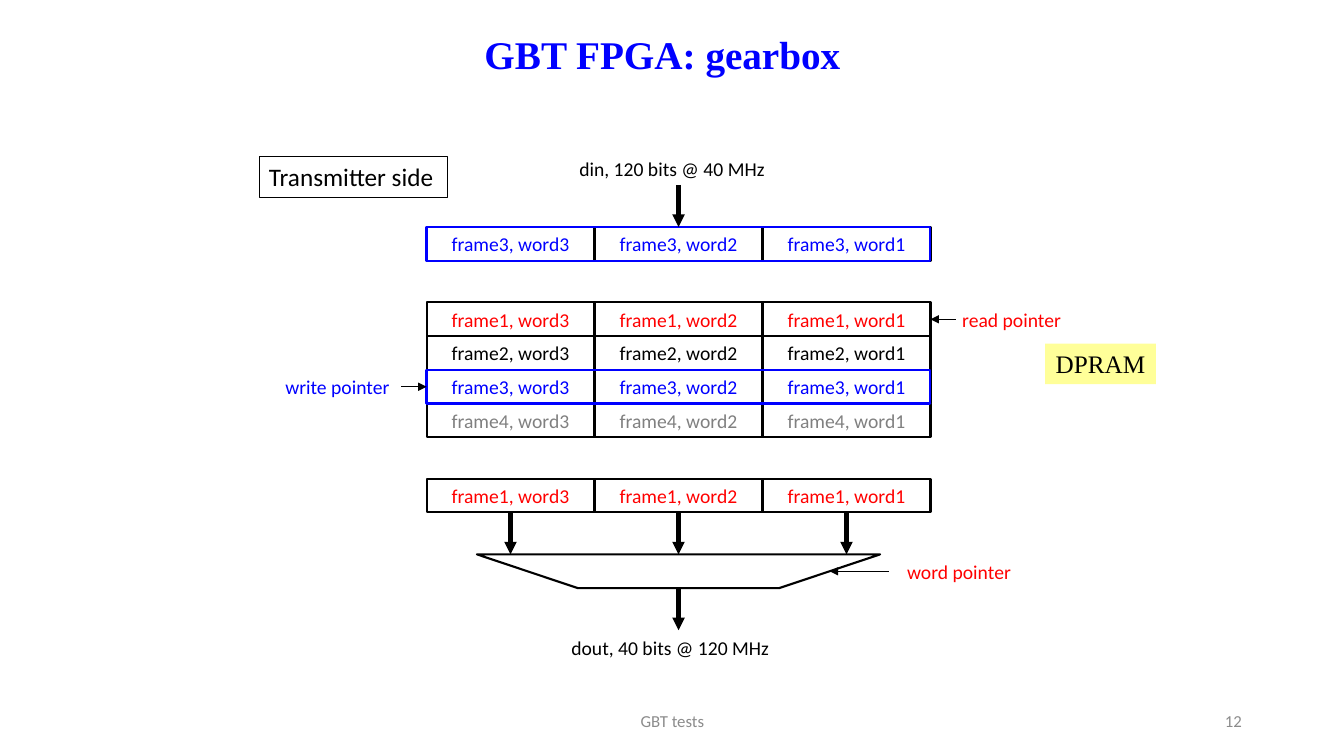
from lxml import etree
from pptx import Presentation
from pptx.dml.color import RGBColor
from pptx.enum import shapes, text
from pptx.oxml.ns import qn
from pptx.util import Cm, Pt

BLACK = RGBColor(0x00, 0x00, 0x00)
BLUE = RGBColor(0x00, 0x00, 0xFF)
RED = RGBColor(0xFF, 0x00, 0x00)
GRAY = RGBColor(0x80, 0x80, 0x80)
PALE = RGBColor(0x8C, 0x8C, 0x8C)
YELLOW = RGBColor(0xFF, 0xFF, 0x99)
SANS, SERIF = "Calibri", "Times New Roman"
LEFT, MID, RIGHT = text.PP_ALIGN.LEFT, text.PP_ALIGN.CENTER, text.PP_ALIGN.RIGHT
TOP, HALF = text.MSO_ANCHOR.TOP, text.MSO_ANCHOR.MIDDLE
ROW, DROP = 0.85, 1.06
COLS = 3
INKS = {1: RED, 2: BLACK, 3: BLUE, 4: GRAY}


def style(shape, fill=None, line=None, width=1.5):
    """Give a shape its fill and outline, without a shadow."""
    shape.shadow.inherit = False
    if fill is None:
        shape.fill.background()
    else:
        shape.fill.solid()
        shape.fill.fore_color.rgb = fill
    if line is None:
        shape.line.fill.background()
    else:
        shape.line.color.rgb = line
        shape.line.width = Pt(width)


def write(shape, words, color=BLACK, size=14, font=SANS, align=LEFT,
          anchor=TOP, bold=False):
    """Put one line of formatted text in a shape."""
    frame = shape.text_frame
    frame.text = words
    frame.word_wrap = False
    frame.vertical_anchor = anchor
    para = frame.paragraphs[0]
    para.alignment = align
    face = para.runs[0].font
    face.name, face.size, face.bold = font, Pt(size), bold
    face.color.rgb = color


def label(slide, box, words, **look):
    """Add a plain text box."""
    write(slide.shapes.add_textbox(*map(Cm, box)), words, **look)


def rect(slide, box, **look):
    """Add a rectangle and return it."""
    shape = slide.shapes.add_shape(shapes.MSO_SHAPE.RECTANGLE, *map(Cm, box))
    style(shape, **look)
    return shape


def arrow(slide, start, end, width=0.75):
    """Add a straight arrow between two points."""
    line = slide.shapes.add_connector(
        shapes.MSO_CONNECTOR.STRAIGHT, *map(Cm, (*start, *end)))
    line.line.color.rgb = BLACK
    line.line.width = Pt(width)
    etree.SubElement(line.line._get_or_add_ln(), qn("a:tailEnd"), type="triangle")
    etree.SubElement(line._element.spPr, qn("a:effectLst"))


def grid(slide, box, frames, mark=None):
    """Draw one row of words per frame and outline the marked row in blue."""
    x, y, w = box
    step = w / COLS
    for row, num in enumerate(frames):
        for col in range(COLS):
            cell = rect(slide, (x + col * step, y + row * ROW, step, ROW), line=BLACK)
            write(cell, f"frame{num}, word{COLS - col}", color=INKS[num],
                  align=MID, anchor=HALF)
    if mark is not None:
        rect(slide, (x, y + mark * ROW, w, ROW), line=BLUE)


def source(slide, box):
    """Draw the incoming frame register with its input arrow."""
    x, y, w = box
    mid = x + w / 2
    grid(slide, box, [3], mark=0)
    arrow(slide, (mid, y - DROP), (mid, y), 3)
    label(slide, (mid - 2.75, y - 1.88, 5.23, 0.86), "din, 120 bits @ 40 MHz")


def memory(slide, box):
    """Draw the memory rows with the read and write pointers."""
    x, y, w = box
    end = x + w
    grid(slide, box, [1, 2, 3, 4], mark=2)
    read, put = y + ROW / 2, y + 2.5 * ROW
    arrow(slide, (x - 0.64, put), (x, put))
    label(slide, (x - 3.81, put - 0.42, 3.15, ROW), "write pointer", color=BLUE)
    arrow(slide, (end + 0.63, read), (end, read))
    label(slide, (end + 0.55, read - 0.4, 3.02, ROW), "read pointer", color=RED)
    tag = rect(slide, (end + 2.89, y + 1.04, 2.79, 1.02), fill=YELLOW)
    write(tag, "DPRAM", size=18, font=SERIF, align=MID)


def output(slide, box):
    """Draw the outgoing register, the multiplexer and its output."""
    x, y, w = box
    mid, step = x + w / 2, w / COLS
    top = y + ROW + DROP
    low = top + ROW
    left, right = x + 1.27, x + w - 1.27
    grid(slide, box, [1])
    form = slide.shapes.build_freeform(Cm(left), Cm(top))
    corners = [(left + 2.54, low), (right - 2.54, low), (right, top)]
    form.add_line_segments([(Cm(a), Cm(b)) for a, b in corners], close=True)
    style(form.convert_to_shape(), line=BLACK)
    for col in range(COLS):
        pos = x + (col + 0.5) * step
        arrow(slide, (pos, y + ROW), (pos, top), 3)
    side = top + ROW / 2
    arrow(slide, (right + 0.22, side), (right - 1.27, side))
    label(slide, (right + 0.43, side - 0.4, 3.15, ROW), "word pointer", color=RED)
    arrow(slide, (mid, low), (mid, low + DROP), 3)
    label(slide, (mid - 2.95, low + 1.08, 5.54, 0.86), "dout, 40 bits @ 120 MHz")


def header(slide, box):
    """Write the title and the boxed name of the side shown."""
    x, y, w, h = box
    label(slide, box, "GBT FPGA: gearbox", color=BLUE, size=28, font=SERIF, bold=True)
    side = rect(slide, (x - 5.43, y + 3.3, 4.75, 1.04), line=BLACK, width=0.75)
    write(side, "Transmitter side", size=18)


def footer(slide, box):
    """Write the footer text and the slide number."""
    x, y, w, h = box
    look = dict(color=PALE, size=12, anchor=HALF)
    label(slide, (x, y, 11.43, h), "GBT tests", align=MID, **look)
    label(slide, (x + w - 7.62, y, 7.62, h), "12", align=RIGHT, **look)


def main():
    """Build the slide and save it."""
    deck = Presentation()
    deck.slide_width, deck.slide_height = Cm(33.87), Cm(19.05)
    slide = deck.slides.add_slide(deck.slide_layouts[6])
    footer(slide, (11.23, 17.65, 20.32, 1.02))
    header(slide, (11.96, 0.64, 9.58, 1.45))
    x, w = 10.75, 12.7
    memory(slide, (x, 7.62, w))
    output(slide, (x, 12.06, w))
    source(slide, (x, 5.72, w))
    deck.save("out.pptx")


if __name__ == "__main__":
    main()
